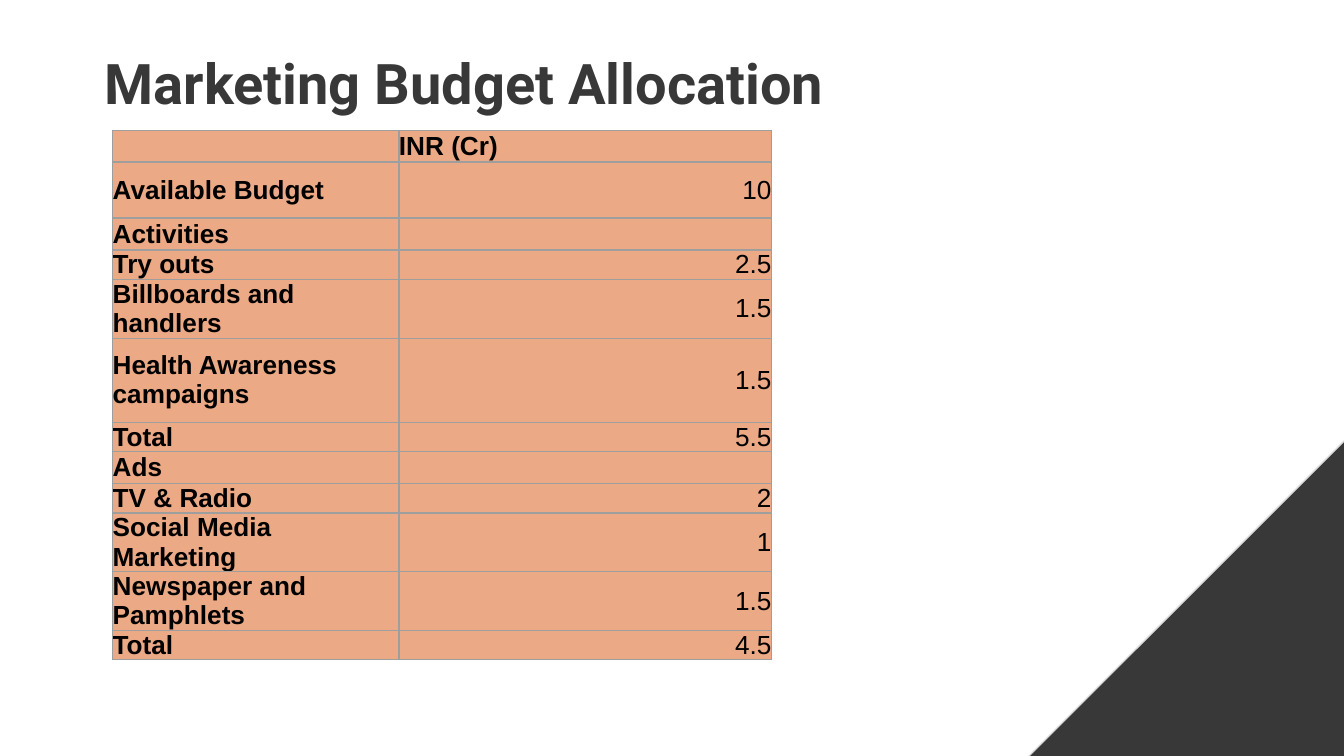
"""Build the marketing budget allocation slide."""
from lxml import etree
from pptx import Presentation
from pptx import util as u
from pptx.dml.color import RGBColor
from pptx.enum import shapes, text
from pptx.oxml.ns import qn

COLORS = {"dark": "383838", "edge": "DBDBDB", "grid": "9E9E9E", "cell": "EBA985", "ink": "000000"}
LINE_CM = 0.53
ROWS = [
    ("", "INR (Cr)", 1),
    ("Available Budget", "10", 2),
    ("Activities", "", 1),
    ("Try outs", "2.5", 1),
    ("Billboards and handlers", "1.5", 2),
    ("Health Awareness campaigns", "1.5", 3),
    ("Total", "5.5", 1),
    ("Ads", "", 1),
    ("TV & Radio", "2", 1),
    ("Social Media Marketing", "1", 2),
    ("Newspaper and Pamphlets", "1.5", 2),
    ("Total", "4.5", 1),
]


def add_text(p, content, color, **font):
    r = p.add_run()
    r.text = content
    for name, value in font.items():
        setattr(r.font, name, value)
    r.font.color.rgb = RGBColor.from_string(COLORS[color])


def add_borders(cell):
    tc_pr = cell._tc.get_or_add_tcPr()
    for i, side in enumerate(("lnL", "lnR", "lnT", "lnB")):
        ln = etree.Element(qn(f"a:{side}"), w=str(u.Pt(0.75)))
        fill = etree.SubElement(ln, qn("a:solidFill"))
        etree.SubElement(fill, qn("a:srgbClr"), val=COLORS["grid"])
        tc_pr.insert(i, ln)


prs = Presentation()
prs.slide_width, prs.slide_height = u.Cm(25.4), u.Cm(14.29)
s = prs.slides.add_slide(prs.slide_layouts[6])

sp = s.shapes.add_shape(
    shapes.MSO_SHAPE.RIGHT_TRIANGLE, u.Cm(16.13), u.Cm(4.27), u.Cm(13.34), u.Cm(13.34)
)
sp.element.spPr.xfrm.set("flipH", "1")
sp.shadow.inherit = False
sp.fill.solid()
sp.fill.fore_color.rgb = RGBColor.from_string(COLORS["dark"])
sp.line.color.rgb = RGBColor.from_string(COLORS["edge"])
sp.line.width = u.Pt(0.75)

table = s.shapes.add_table(
    len(ROWS), 2, u.Cm(2.13), u.Cm(2.46), u.Cm(12.45), u.Cm(LINE_CM * sum(row[2] for row in ROWS))
).table
for column, width in zip(table.columns, (5.41, 7.04)):
    column.width = u.Cm(width)

cell_format = {
    "margin_left": 0, "margin_right": 0, "margin_top": 0, "margin_bottom": 0,
    "vertical_anchor": text.MSO_ANCHOR.MIDDLE,
}
for i, (label, amount, lines) in enumerate(ROWS):
    table.rows[i].height = u.Cm(LINE_CM * lines)
    for j, content in enumerate((label, amount)):
        cell = table.cell(i, j)
        for name, value in cell_format.items():
            setattr(cell, name, value)
        cell.fill.solid()
        cell.fill.fore_color.rgb = RGBColor.from_string(COLORS["cell"])
        add_borders(cell)
        p = cell.text_frame.paragraphs[0]
        is_number = i > 0 and j == 1
        p.alignment = text.PP_ALIGN.RIGHT if is_number else text.PP_ALIGN.LEFT
        if content:
            add_text(p, content, "ink", name="Arial", size=u.Pt(14), bold=not is_number)
        else:
            etree.SubElement(p._p, qn("a:endParaRPr"), sz="1400")

tf = s.shapes.add_textbox(u.Cm(1.73), u.Cm(0.66), u.Cm(19.51), u.Cm(1.47)).text_frame
title_format = {
    "word_wrap": True, "vertical_anchor": text.MSO_ANCHOR.TOP,
    "margin_left": u.Cm(0.25), "margin_right": u.Cm(0.25),
    "margin_top": u.Cm(0.25), "margin_bottom": u.Cm(0.25),
}
for name, value in title_format.items():
    setattr(tf, name, value)
add_text(tf.paragraphs[0], "Marketing Budget Allocation", "dark",
         name="Roboto", size=u.Pt(30), bold=True)

prs.save("out.pptx")
